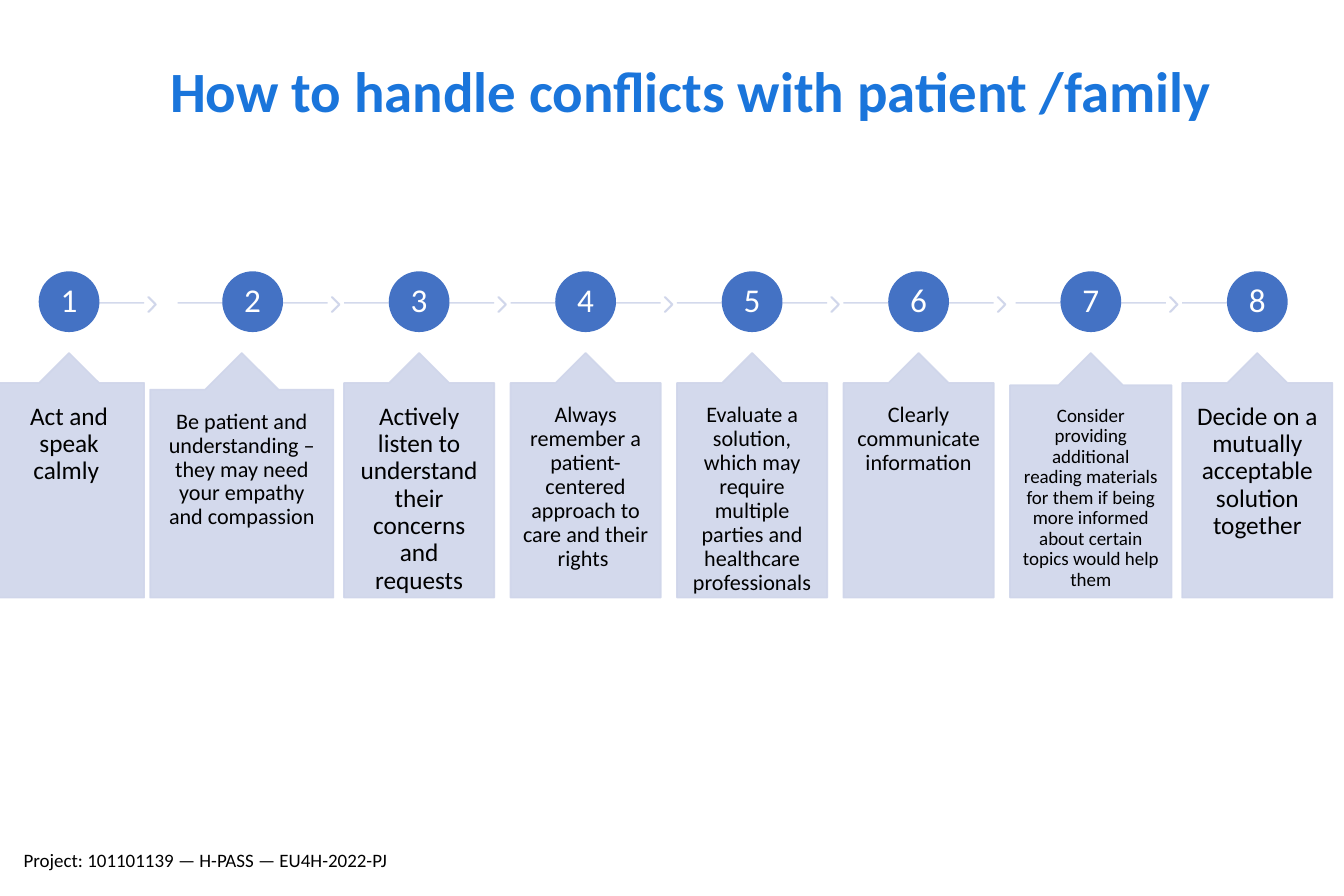
from lxml.etree import SubElement
from pptx import Presentation
from pptx.dml.color import RGBColor
from pptx.enum.shapes import MSO_CONNECTOR, MSO_SHAPE
from pptx.enum.text import MSO_ANCHOR, PP_ALIGN
from pptx.oxml.ns import qn
from pptx.util import Inches, Pt

COLORS = {"title": "1A75DB", "disc": "4472C4", "pale": "CFD5EA",
          "light": "FFFFFF", "dark": "000000"}
CELL = 0.1  # inches per column and row
PITCH, SPAN = 14.63, 13.2  # columns from step to step, and per step
FIRST = 0.97
RAIL = 26.6  # row of the line through the discs
DISC = 5.2

# text, size, shift of the step, card width, shift of the card
STEPS = [
    ("Act and speak calmly ", 16, -1.5, SPAN, 0),
    ("Be patient and understanding – they may need your empathy "
     "and compassion", 14, 0, 16.1, -0.95),
    ("Actively listen to understand their concerns and requests",
     16, 0, SPAN, 0),
    ("Always remember a patient-centered approach to care and their rights ",
     14, 0, SPAN, 0),
    ("Evaluate a solution, which may require multiple parties and "
     "healthcare professionals", 14, 0, SPAN, 0),
    ("Clearly communicate information", 14, 0, SPAN, 0),
    ("Consider providing additional reading materials for them if being "
     "more informed about certain topics would help them", 12, 0.5, 14.2, 0),
    ("Decide on a mutually acceptable solution together", 16, 0.5, SPAN, 0),
]


def grid(*cells):
    """Turn columns and rows into lengths."""
    return [Inches(cell * CELL) for cell in cells]


class Board:
    def __init__(self, deck):
        self.font = "Calibri"
        self.slide = deck.slides.add_slide(deck.slide_layouts[6])
        self.shapes = self.slide.shapes

    def paint(self, fill, name, alpha):
        fill.solid()
        fill.fore_color.rgb = RGBColor.from_string(COLORS[name])
        if alpha < 100:
            tint = fill._xPr.find(".//" + qn("a:srgbClr"))
            SubElement(tint, qn("a:alpha"), val=str(alpha * 1000))

    def label(self, shape, text, size, color="dark", bold=False,
              align=PP_ALIGN.CENTER, anchor=MSO_ANCHOR.TOP,
              pad=(1, 0.5), space=0.9):
        frame = shape.text_frame
        frame.word_wrap = True
        frame.vertical_anchor = anchor
        side, edge = grid(*pad)
        frame.margin_left = frame.margin_right = side
        frame.margin_top = frame.margin_bottom = edge
        line = frame.paragraphs[0]
        line.text = text
        line.alignment = align
        line.line_spacing = space
        font = line.font
        font.name, font.size, font.bold = self.font, Pt(size), bold
        font.color.rgb = RGBColor.from_string(COLORS[color])

    def text(self, box, text, size, **style):
        self.label(self.shapes.add_textbox(*grid(*box)), text, size, **style)

    def shape(self, kind, box, color, alpha=100, turns=()):
        """Add a preset shape; turns are its adjustment values."""
        shape = self.shapes.add_shape(kind, *grid(*box))
        shape.shadow.inherit = False
        for i, turn in enumerate(turns):
            shape.adjustments[i] = turn
        self.paint(shape.fill, color, alpha)
        self.paint(shape.line.fill, color, alpha)
        shape.line.width = Pt(1)
        return shape

    def rail(self, start, end):
        line = self.shapes.add_connector(
            MSO_CONNECTOR.STRAIGHT, *grid(start, RAIL, end, RAIL))
        self.paint(line.line.fill, "pale", 90)
        line.line.width = Pt(1)
        SubElement(line._element.spPr, qn("a:effectLst"))

    def disc(self, mid, number):
        box = (mid - DISC / 2, RAIL - DISC / 2 - 0.1, DISC, DISC)
        disc = self.shape(MSO_SHAPE.OVAL, box, "disc")
        self.label(disc, number, 21, color="light",
                   anchor=MSO_ANCHOR.MIDDLE, pad=(0.2, 0.2))

    def card(self, mid, width, text, size):
        card = self.shape(MSO_SHAPE.UP_ARROW_CALLOUT,
                          (mid - width / 2, 31, width, 21.5),
                          "pale", 90, (0.5, 0.2, 0.2, 1))
        self.label(card, text, size, pad=(1, 1.8))


def main():
    deck = Presentation()
    deck.slide_width, deck.slide_height = Inches(11.81), Inches(7.87)
    board = Board(deck)
    board.text((7.6, 4.2, 106.2, 7.3),
               "How to handle conflicts with patient /family", 36,
               color="title", bold=True, anchor=MSO_ANCHOR.BOTTOM)
    for i, (text, size, shift, width, nudge) in enumerate(STEPS):
        left = FIRST + i * PITCH + shift
        mid, right = left + SPAN / 2, left + SPAN
        last = i == len(STEPS) - 1
        board.rail(left if i else mid, mid if last else right)
        if not last:
            board.shape(MSO_SHAPE.CHEVRON,
                        (right + 0.35, RAIL - 0.5, 0.7, 1.3),
                        "pale", 90, (0.9,))
        board.disc(mid, str(i + 1))
        board.card(mid + nudge, width, text, size)
    board.text((1.1, 74, 36.3, 2.7),
               "Project: 101101139 — H-PASS — EU4H-2022-PJ", 12,
               align=PP_ALIGN.LEFT, space=1.0)
    deck.save("out.pptx")


if __name__ == "__main__":
    main()
